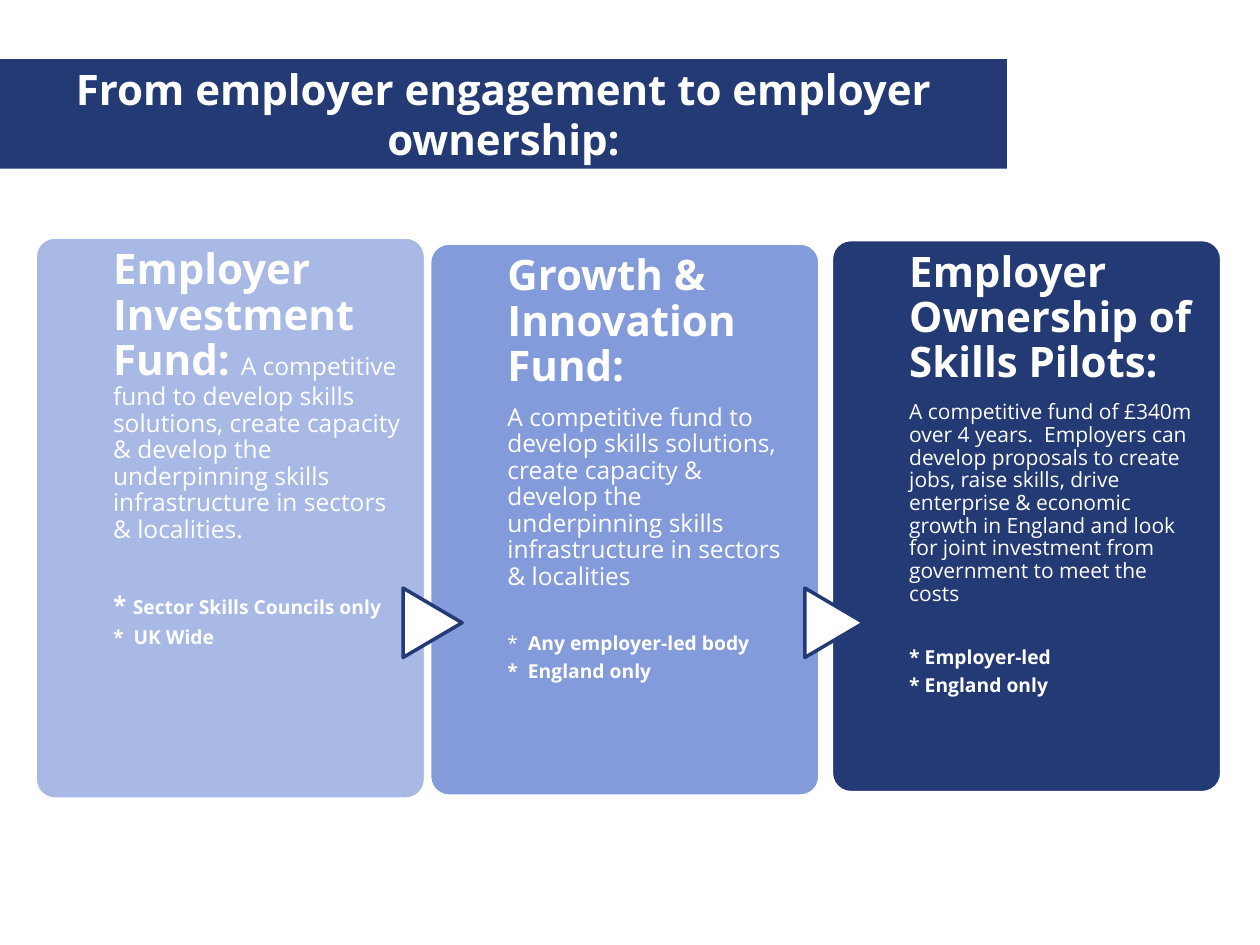
from lxml import etree
from pptx import Presentation
from pptx.dml.color import RGBColor
from pptx.enum.shapes import MSO_SHAPE
from pptx.enum.text import MSO_ANCHOR, MSO_AUTO_SIZE, PP_ALIGN
from pptx.oxml.ns import qn
from pptx.util import Cm, Pt

ROUNDED = MSO_SHAPE.ROUNDED_RECTANGLE
TRIANGLE = MSO_SHAPE.FLOWCHART_EXTRACT
MIDDLE, TOP = MSO_ANCHOR.MIDDLE, MSO_ANCHOR.TOP
NO_AUTOFIT = MSO_AUTO_SIZE.NONE
CENTER, LEFT = PP_ALIGN.CENTER, PP_ALIGN.LEFT

NAVY = RGBColor(0x23, 0x3A, 0x75)
BLUE = RGBColor(0x5A, 0x7A, 0xCE)
WHITE = RGBColor(0xFF, 0xFF, 0xFF)
FONT = "Open Sans"

HEADING, BODY, SMALL_BODY, NOTE = 24, 14, 12, 11
SPACE_RATIO = 0.35
NOTES_GAP = 20
CARD_WIDTH = Cm(7.87)
ARROW_TOP = Cm(11.96)

FUNDS = [
    {
        "box": (Cm(0.71), Cm(4.78), CARD_WIDTH, Cm(11.33)),
        "fill": BLUE, "opacity": 52, "arrow": False,
        "intro": [
            [("Employer Investment Fund: ", HEADING, True),
             ("A competitive fund to develop skills solutions, create capacity "
              "& develop the underpinning skills infrastructure in sectors "
              "& localities.", BODY, False)],
        ],
        "notes": [
            [("* ", BODY, True), ("Sector Skills Councils only", NOTE, True)],
            [("*  UK Wide", NOTE, True)],
        ],
    },
    {
        "box": (Cm(8.66), Cm(4.9), CARD_WIDTH, Cm(11.15)),
        "fill": BLUE, "opacity": 75, "arrow": True,
        "intro": [
            [("Growth & Innovation Fund:", HEADING, True)],
            [("A competitive fund to develop skills solutions, create capacity "
              "& develop the underpinning skills infrastructure in sectors "
              "& localities", BODY, False)],
        ],
        "notes": [
            [("*  ", NOTE, False), ("Any employer-led body", NOTE, True)],
            [("*  England only", NOTE, True)],
        ],
    },
    {
        "box": (Cm(16.76), Cm(4.83), CARD_WIDTH, Cm(11.15)),
        "fill": NAVY, "opacity": 100, "arrow": True,
        "intro": [
            [("Employer Ownership of Skills Pilots:", HEADING, True)],
            [("A competitive fund of £340m over 4 years.  Employers can develop "
              "proposals to create jobs, raise skills, drive enterprise "
              "& economic growth in England and look for joint investment from "
              "government to meet the costs", SMALL_BODY, False)],
        ],
        "notes": [
            [("* Employer-led", NOTE, True)],
            [("* England only", NOTE, True)],
        ],
    },
]


def style_run(run, size, bold):
    """Give a run the slide's font in white."""
    run.font.name = FONT
    run.font.size = Pt(size)
    run.font.bold = bold
    run.font.color.rgb = WHITE


def add_outlined_shape(slide, preset, box, fill, line):
    """Add a flat filled shape with a two point outline."""
    shape = slide.shapes.add_shape(preset, *box)
    shape.shadow.inherit = False
    shape.fill.solid()
    shape.fill.fore_color.rgb = fill
    shape.line.color.rgb = line
    shape.line.width = Pt(2)
    return shape


def set_opacity(shape, percent):
    """Make the solid fill of a shape partly transparent."""
    color = shape.fill._xPr.find(qn("a:solidFill"))[0]
    etree.SubElement(color, qn("a:alpha")).set("val", str(percent * 1000))


def add_banner(slide, box, title):
    """Turn the title placeholder into the banner across the top."""
    banner = slide.shapes.title
    banner.left, banner.top, banner.width, banner.height = box
    banner.fill.solid()
    banner.fill.fore_color.rgb = NAVY
    frame = banner.text_frame
    frame.text = title
    frame.auto_size = NO_AUTOFIT
    frame.vertical_anchor = MIDDLE
    heading = frame.paragraphs[0]
    heading.alignment = CENTER
    style_run(heading.runs[0], HEADING, True)


def add_fund_text(slide, box, intro, notes):
    """Write the description of a fund and the notes below it."""
    left, top, width, height = box
    description = slide.shapes.add_textbox(left + Cm(1.57), top, Cm(5.87), height)
    frame = description.text_frame
    frame.word_wrap = True
    frame.auto_size = NO_AUTOFIT
    frame.vertical_anchor = TOP
    frame.margin_left = frame.margin_right = frame.margin_bottom = 0
    frame.margin_top = Cm(0.23)
    for index, parts in enumerate(intro + notes):
        paragraph = frame.add_paragraph() if index else frame.paragraphs[0]
        paragraph.alignment = LEFT
        paragraph.line_spacing = 0.9
        gap = SPACE_RATIO * max(size for _, size, _ in parts)
        if index == len(intro) - 1:
            gap += NOTES_GAP
        paragraph.space_after = Pt(gap)
        for text, size, bold in parts:
            run = paragraph.add_run()
            run.text = text
            style_run(run, size, bold)


def add_fund(slide, box, fund):
    """Draw one fund card, the arrow leading into it and its text."""
    card = add_outlined_shape(slide, ROUNDED, box, fund["fill"], WHITE)
    card.adjustments[0] = 0.05
    if fund["opacity"] < 100:
        set_opacity(card, fund["opacity"])
    if fund["arrow"]:
        arrow_box = (box[0] - Cm(0.64), ARROW_TOP, Cm(1.4), Cm(1.19))
        arrow = add_outlined_shape(slide, TRIANGLE, arrow_box, WHITE, NAVY)
        arrow.rotation = 90
    add_fund_text(slide, box, fund["intro"], fund["notes"])


def main():
    """Build the slide and save it."""
    presentation = Presentation()
    presentation.slide_width, presentation.slide_height = Cm(25.4), Cm(19.05)
    slide = presentation.slides.add_slide(presentation.slide_layouts[5])
    add_banner(slide, (Cm(0), Cm(1.19), Cm(20.3), Cm(2.21)),
               "From employer engagement to employer ownership:")
    for fund in FUNDS:
        add_fund(slide, fund["box"], fund)
    presentation.save("out.pptx")


if __name__ == "__main__":
    main()
